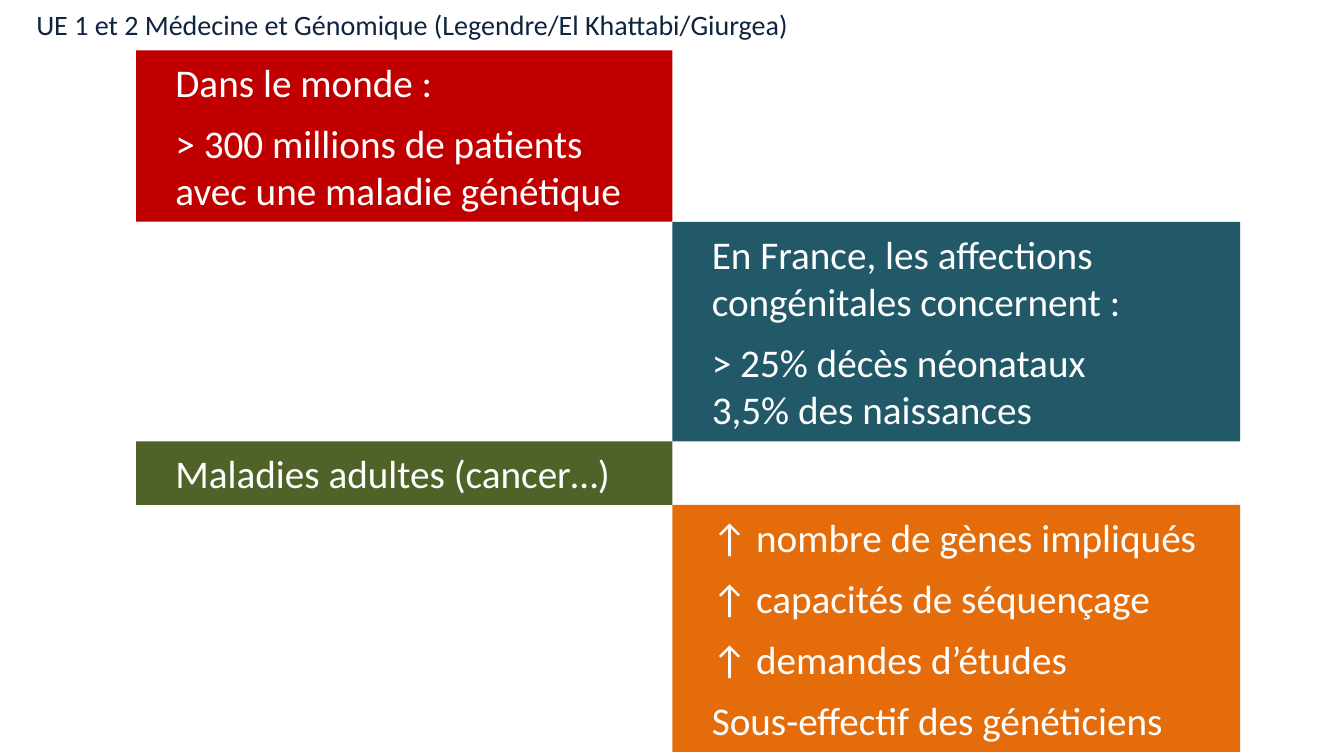
from pptx import Presentation
from pptx.dml.color import RGBColor
from pptx.enum.shapes import MSO_SHAPE as Shape
from pptx.enum.text import MSO_ANCHOR as Anchor, PP_ALIGN as Align
from pptx.util import Pt

PX = 9144
LEFT_COLUMN = (135, 532)
RIGHT_COLUMN = (667, 563)
FIRST_TOP = 50
BLOCKS = [
    (LEFT_COLUMN, 170, "C00000", [
        ["Dans le monde :"],
        ["> 300 millions de patients", "avec une maladie génétique"]]),
    (RIGHT_COLUMN, 218, "215968", [
        ["En France, les affections congénitales concernent :"],
        ["> 25% décès néonataux", "3,5% des naissances"]]),
    (LEFT_COLUMN, 63, "4F6228", [["Maladies adultes (cancer…)"]]),
    (RIGHT_COLUMN, 245, "E46C0A", [
        ["↑ nombre de gènes impliqués"],
        ["↑ capacités de séquençage"],
        ["↑ demandes d’études"],
        ["Sous-effectif des généticiens"]]),
]


def px(*lengths):
    """Turn lengths in px into EMU."""
    return [length * PX for length in lengths]


def color(value):
    """Turn a hex string into a colour."""
    return RGBColor.from_string(value)


def set_frame(frame, anchor, margins):
    """Set the wrapping, anchor and left, top, right, bottom margins."""
    frame.word_wrap = True
    frame.vertical_anchor = anchor
    (frame.margin_left, frame.margin_top,
     frame.margin_right, frame.margin_bottom) = px(*margins)


def format_paragraph(paragraph, text, size, hex_color, gap=0):
    """Write one left-aligned paragraph with a gap above it in points."""
    paragraph.text = text
    paragraph.alignment = Align.LEFT
    paragraph.space_before = Pt(gap)
    font = paragraph.font
    font.name = "Calibri"
    font.size = Pt(size)
    font.color.rgb = color(hex_color)


def add_heading(slide, left, top, width, height):
    """Place the course name in the title placeholder."""
    title = slide.shapes.title
    title.left, title.top, title.width, title.height = px(left, top, width, height)
    set_frame(title.text_frame, Anchor.TOP, (10, 5, 10, 5))
    format_paragraph(
        title.text_frame.paragraphs[0],
        "UE 1 et 2 Médecine et Génomique (Legendre/El Khattabi/Giurgea)",
        20, "0F243E")


def add_block(slide, left, top, width, height, fill, groups):
    """Draw a coloured block whose groups of lines are set apart."""
    block = slide.shapes.add_shape(Shape.RECTANGLE, *px(left, top, width, height))
    block.shadow.inherit = False
    block.fill.solid()
    block.fill.fore_color.rgb = color(fill)
    block.line.fill.background()
    frame = block.text_frame
    set_frame(frame, Anchor.TOP, (39, 8, 10, 8))
    paragraph = frame.paragraphs[0]
    for group_index, group in enumerate(groups):
        for line_index, line in enumerate(group):
            is_first = group_index == line_index == 0
            if not is_first:
                paragraph = frame.add_paragraph()
            gap = 10 if group_index and line_index == 0 else 0
            format_paragraph(paragraph, line, 28, "FFFFFF", gap)


def add_staircase(slide, top):
    """Stack the blocks downwards, each in its own column."""
    for (left, width), height, fill, groups in BLOCKS:
        add_block(slide, left, top, width, height, fill, groups)
        top += height


def main():
    """Build and save the presentation."""
    presentation = Presentation()
    presentation.slide_width, presentation.slide_height = px(1333, 750)
    slide = presentation.slides.add_slide(presentation.slide_layouts[5])
    add_heading(slide, 26, 2, 835, 44)
    add_staircase(slide, FIRST_TOP)
    presentation.save("out.pptx")


if __name__ == "__main__":
    main()
